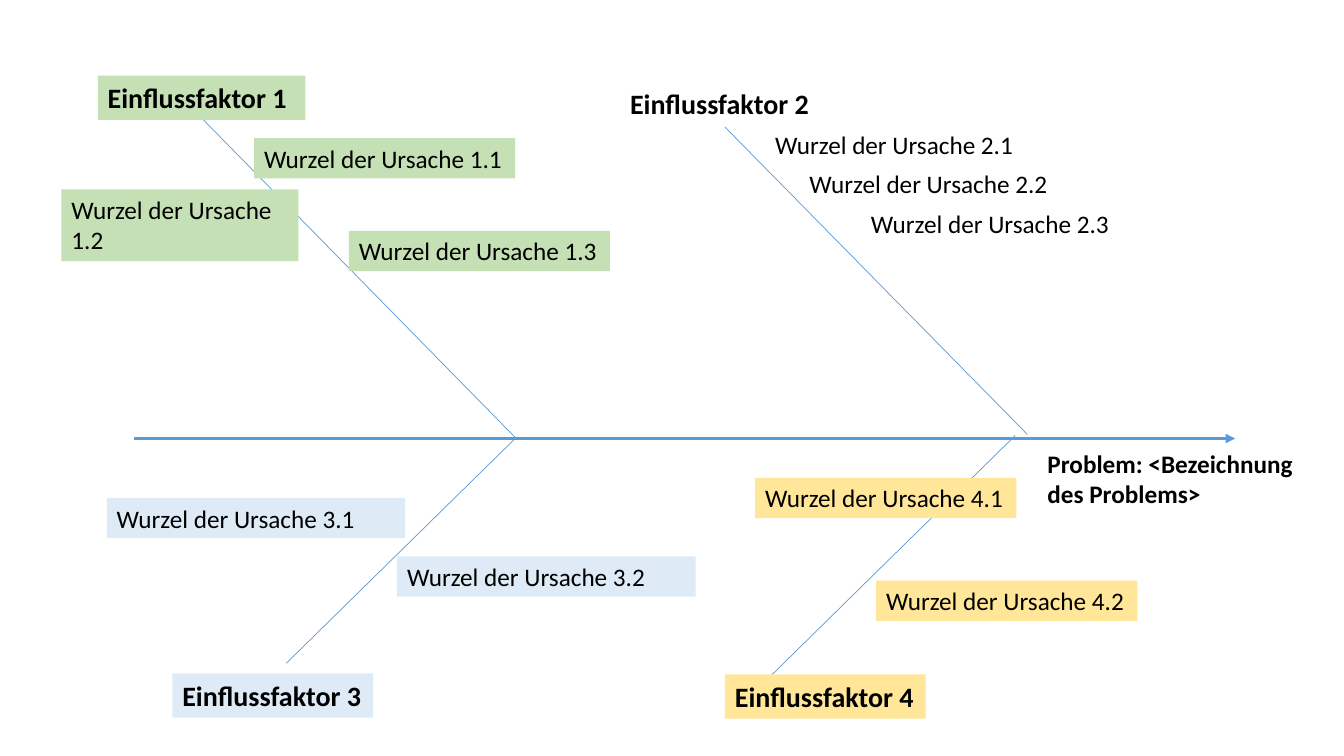
"""Build a fishbone cause-and-effect slide with four influencing factors."""
from lxml.etree import SubElement
from pptx import Presentation
from pptx.dml.color import RGBColor
from pptx.enum.shapes import MSO_CONNECTOR
from pptx.enum.text import MSO_AUTO_SIZE, PP_ALIGN
from pptx.oxml.ns import qn
from pptx.util import Pt

PX = 9144
GREEN, YELLOW, BLUE = "C5E0B4", "FFE699", "DEEBF7"
FACTOR = {"size": Pt(20), "bold": True}
PROBLEM = {"size": Pt(18), "bold": True}
CAUSE = {"size": Pt(18), "bold": False}


def color(hex_value):
    return RGBColor.from_string(hex_value)


prs = Presentation()
prs.slide_width, prs.slide_height = 1333 * PX, 750 * PX
slide = prs.slides.add_slide(prs.slide_layouts[6])

bones = [
    (133, 435, 1225, 435, 2.25),
    (194, 111, 511, 434, 0.5),
    (719, 126, 1019, 431, 0.5),
    (284, 658, 511, 435, 0.5),
    (761, 674, 1007, 432, 0.5),
]
for order, (*ends, weight) in enumerate(bones):
    bone = slide.shapes.add_connector(MSO_CONNECTOR.STRAIGHT, *[end * PX for end in ends])
    bone.line.color.rgb = color("5B9BD5")
    bone.line.width = Pt(weight)
    if order == 0:
        SubElement(bone.line._get_or_add_ln(), qn("a:tailEnd"), type="triangle")
    SubElement(bone._element.spPr, qn("a:effectLst"))

labels = [
    ("Problem: <Bezeichnung\ndes Problems>", 1029, 440, 271, 71, None, PROBLEM, False),
    ("Einflussfaktor 1", 97, 75, 206, 44, GREEN, FACTOR, False),
    ("Einflussfaktor 2", 615, 81, 199, 44, None, FACTOR, False),
    ("Einflussfaktor 4", 719, 669, 199, 44, YELLOW, FACTOR, False),
    ("Einflussfaktor 3", 171, 668, 199, 44, BLUE, FACTOR, False),
    ("Wurzel der Ursache 1.1", 252, 137, 259, 40, GREEN, CAUSE, False),
    ("Wurzel der Ursache 2.1", 759, 123, 265, 40, None, CAUSE, False),
    ("Wurzel der Ursache 1.3", 346, 229, 259, 40, GREEN, CAUSE, False),
    ("Wurzel der Ursache 4.2", 869, 576, 259, 40, YELLOW, CAUSE, False),
    ("Wurzel der Ursache 2.2", 793, 162, 259, 40, None, CAUSE, False),
    ("Wurzel der Ursache 2.3", 854, 202, 418, 40, None, CAUSE, True),
    ("Wurzel der Ursache 3.2", 394, 552, 296, 40, BLUE, CAUSE, True),
    ("Wurzel der Ursache 4.1", 749, 474, 259, 40, YELLOW, CAUSE, False),
    ("Wurzel der Ursache 3.1", 106, 494, 296, 40, BLUE, CAUSE, True),
    ("Wurzel der Ursache 1.2", 61, 188, 235, 71, GREEN, CAUSE, True),
]
for wording, *bounds, background, style, wraps in labels:
    label = slide.shapes.add_textbox(*[length * PX for length in bounds])
    if background:
        label.fill.solid()
        label.fill.fore_color.rgb = color(background)
    frame = label.text_frame
    frame.text = wording
    frame.word_wrap = wraps
    frame.auto_size = MSO_AUTO_SIZE.SHAPE_TO_FIT_TEXT
    for paragraph in frame.paragraphs:
        paragraph.alignment = PP_ALIGN.LEFT
        font = paragraph.runs[0].font
        font.color.rgb = color("000000")
        for attribute, value in {"name": "Calibri", **style}.items():
            setattr(font, attribute, value)

prs.save("out.pptx")
